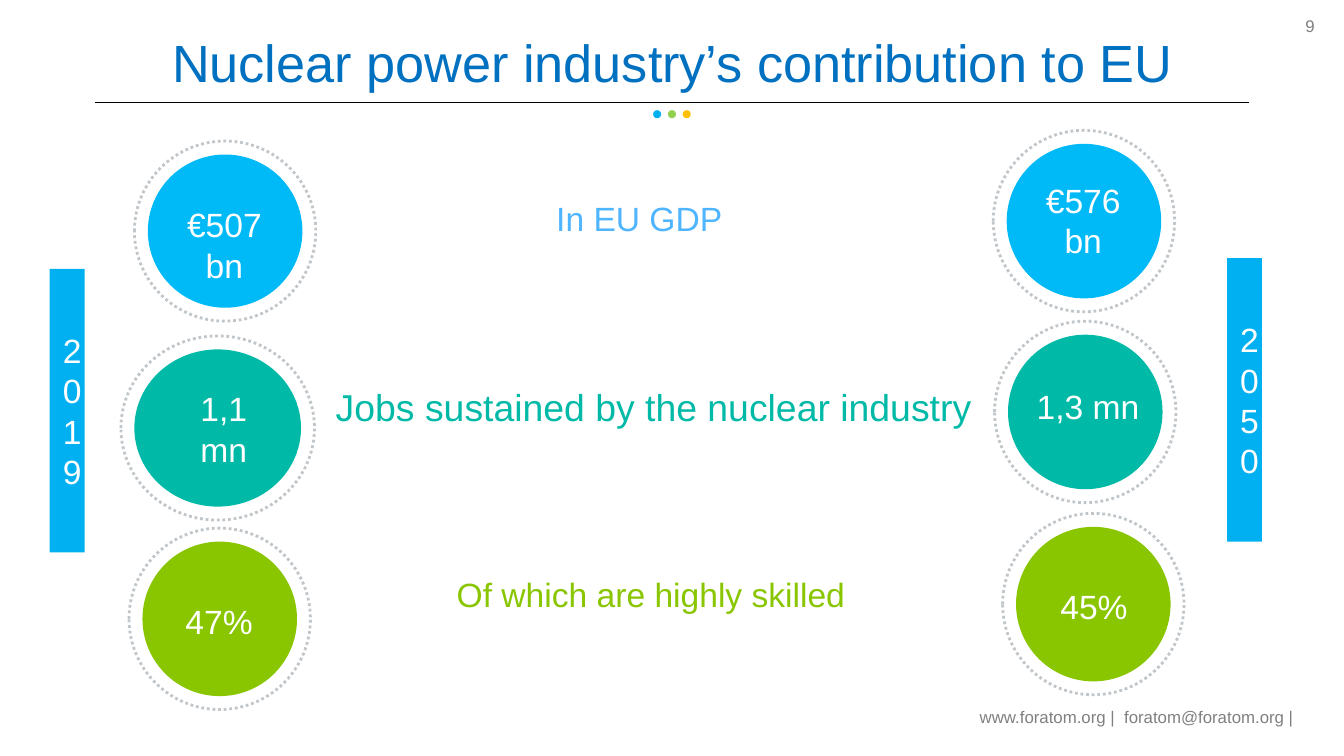
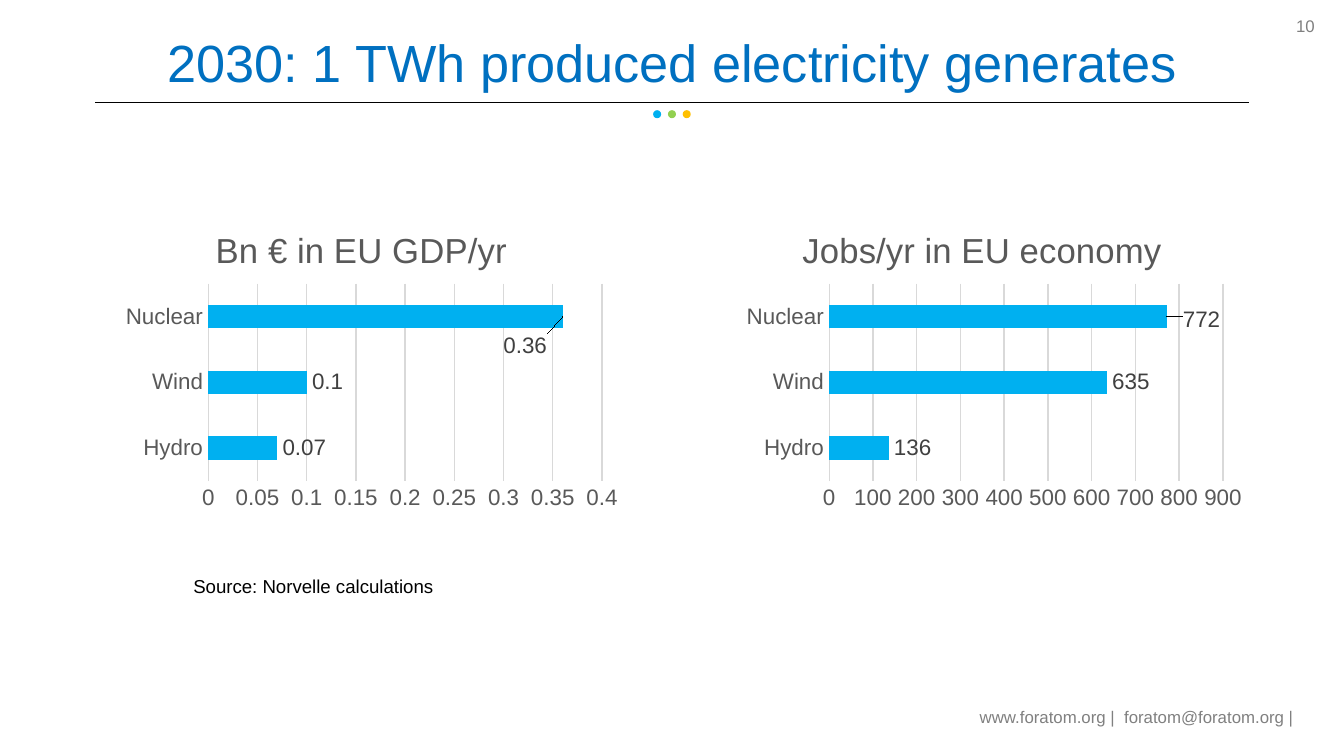
from dataclasses import dataclass

from lxml.etree import SubElement
from pptx import Presentation
from pptx.chart.data import CategoryChartData
from pptx.dml.color import RGBColor
from pptx.enum.chart import XL_CHART_TYPE as ChartType
from pptx.enum.chart import XL_LABEL_POSITION as LabelPosition
from pptx.enum.chart import XL_TICK_MARK as TickMark
from pptx.enum.dml import MSO_LINE as Dash
from pptx.enum.shapes import MSO_CONNECTOR as Connector
from pptx.enum.shapes import MSO_SHAPE as Shape
from pptx.enum.text import MSO_ANCHOR as Anchor
from pptx.enum.text import MSO_AUTO_SIZE as AutoSize
from pptx.enum.text import PP_ALIGN as Align
from pptx.oxml import parse_xml
from pptx.oxml.ns import nsdecls, qn
from pptx.util import Inches, Pt


@dataclass(frozen=True)
class Theme:
    font: str = "Arial"
    title: str = "0070C0"
    accent: str = "00B0F0"
    green: str = "92D050"
    amber: str = "FFC000"
    gdp: str = "00B9F7"
    gdp_text: str = "50B5FF"
    jobs: str = "00BAA7"
    skilled: str = "89C600"
    ring: str = "C1C6CA"
    grid: str = "D9D9D9"
    muted: str = "808080"
    axis: str = "595959"
    value: str = "404040"
    black: str = "000000"
    white: str = "FFFFFF"
    title_size: float = 28
    jobs_size: float = 20
    chart_title_size: float = 18.6
    body_size: float = 18
    axis_size: float = 12
    source_size: float = 10
    small_size: float = 9


THEME = Theme()

FOOTER = "www.foratom.org |  foratom@foratom.org |"
FIRST_PAGE_NUMBER = 9
CONTRIBUTION_TITLE = "Nuclear power industry’s contribution to EU"
GENERATION_TITLE = "2030: 1 TWh produced electricity generates"
SOURCE = "Source: Norvelle calculations"

TOPICS = [
    ("In EU GDP", (4.04, 1.42, 1.45, 0.4), THEME.body_size, THEME.gdp_text),
    ("Jobs sustained by the nuclear industry", (2.4, 2.81, 4.97, 0.44),
     THEME.jobs_size, THEME.jobs),
    ("Of which are highly skilled", (3.3, 4.22, 3.12, 0.4),
     THEME.body_size, THEME.skilled),
]

FIGURES = [
    ("€507\nbn", (1.1, 1.15, 1.15, 1.14), (1, 1.47, 1.34, 0.71), THEME.gdp),
    ("1,1\nmn", (1, 2.6, 1.24, 1.17), (1.18, 2.84, 0.97, 0.71), THEME.jobs),
    ("47%", (1.06, 4.03, 1.15, 1.15), (0.96, 4.42, 1.34, 0.4), THEME.skilled),
    ("€576\nbn", (7.49, 1.07, 1.15, 1.15), (7.39, 1.29, 1.34, 0.71), THEME.gdp),
    ("1,3 mn", (7.5, 2.49, 1.15, 1.15), (7.61, 2.82, 0.97, 0.4), THEME.jobs),
    ("45%", (7.56, 3.92, 1.15, 1.15), (7.47, 4.31, 1.34, 0.4), THEME.skilled),
]
RING_MARGIN = 0.1

YEARS = [("2019", (0.37, 2, 0.26, 2.11)), ("2050", (9.13, 1.92, 0.26, 2.11))]

SOURCES_OF_POWER = ["Hydro", "Wind", "Nuclear"]
CHARTS = [
    {"title": "Bn € in EU GDP/yr", "left": 0.69, "values": [0.07, 0.1, 0.36],
     "top_value": 0.4, "step": 0.05, "label_shift": (-0.12, 0.09)},
    {"title": "Jobs/yr in EU economy", "left": 5.31, "values": [136, 635, 772],
     "top_value": 900, "step": 100, "label_shift": (0.02, 0.01)},
]
CHART_TOP, CHART_WIDTH, CHART_HEIGHT = 1.54, 4, 2.42
PLOT_LEFT, PLOT_TOP, PLOT_WIDTH, PLOT_HEIGHT = 0.86, 0.57, 2.93, 1.47
LEADER_LINES_URI = "{CE6537A1-D6FC-4f65-9D91-7224C49458BB}"
CHART_2012 = "http://schemas.microsoft.com/office/drawing/2012/chart"


def rgb(color):
    return RGBColor.from_string(color)


def inches(bounds):
    return [Inches(length) for length in bounds]


def style_font(font, size, color):
    font.name = THEME.font
    font.size = Pt(size)
    font.bold = False
    font.color.rgb = rgb(color)


def write(frame, text, size, color, align=Align.LEFT, spacing=None):
    frame.text = text
    for para in frame.paragraphs:
        para.alignment = align
        if spacing:
            para.line_spacing = spacing
        style_font(para.font, size, color)


def add_text(page, text, bounds, size, color, align=Align.LEFT, wrap=True, spacing=None):
    box = page.shapes.add_textbox(*inches(bounds))
    frame = box.text_frame
    frame.word_wrap = wrap
    if not wrap:
        frame.auto_size = AutoSize.SHAPE_TO_FIT_TEXT
    write(frame, text, size, color, align, spacing)
    return frame


def add_filled(page, kind, bounds, color):
    shape = page.shapes.add_shape(kind, *inches(bounds))
    shape.shadow.inherit = False
    shape.fill.solid()
    shape.fill.fore_color.rgb = rgb(color)
    shape.line.fill.background()
    return shape


def add_page(deck, title, number):
    page = deck.slides.add_slide(deck.slide_layouts[5])

    footer = add_text(page, FOOTER, (7.23, 5.17, 2.47, 0.29), THEME.small_size,
                      THEME.muted, wrap=False, spacing=1.2)
    footer.vertical_anchor = Anchor.MIDDLE
    footer.margin_left = footer.margin_right = Inches(0.06)
    footer.margin_top = footer.margin_bottom = Inches(0.06)

    rule = page.shapes.add_connector(Connector.STRAIGHT, *inches((0.71, 0.76, 9.29, 0.76)))
    rule.line.color.rgb = rgb(THEME.black)
    rule.line.width = Pt(0.5)
    SubElement(rule._element.spPr, qn("a:effectLst"))

    add_text(page, str(number), (9.5, 0.07, 0.38, 0.3), THEME.small_size,
             THEME.muted, Align.RIGHT)
    for index, color in enumerate((THEME.accent, THEME.green, THEME.amber)):
        add_filled(page, Shape.OVAL, (4.86 + 0.11 * index, 0.82, 0.06, 0.06), color)

    heading = page.shapes.title
    heading.left, heading.top, heading.width, heading.height = inches((0.69, 0.22, 8.62, 0.54))
    frame = heading.text_frame
    frame.auto_size = AutoSize.NONE
    frame.word_wrap = True
    frame.vertical_anchor = Anchor.MIDDLE
    write(frame, title, THEME.title_size, THEME.title, Align.CENTER, 0.9)
    return page


def add_figure(page, text, disc, label, color):
    left, top, width, height = disc
    add_filled(page, Shape.OVAL, disc, color)
    ring = page.shapes.add_shape(Shape.OVAL, *inches((
        left - RING_MARGIN, top - RING_MARGIN,
        width + 2 * RING_MARGIN, height + 2 * RING_MARGIN)))
    ring.shadow.inherit = False
    ring.fill.background()
    ring.line.color.rgb = rgb(THEME.ring)
    ring.line.width = Pt(1.5)
    ring.line.dash_style = Dash.ROUND_DOT
    add_text(page, text, label, THEME.body_size, THEME.white, Align.CENTER)


def add_year(page, year, bounds):
    band = add_filled(page, Shape.RECTANGLE, bounds, THEME.accent)
    frame = band.text_frame
    frame.word_wrap = True
    frame.vertical_anchor = Anchor.MIDDLE
    write(frame, year, THEME.body_size, THEME.white, Align.CENTER)


def manual_layout(values):
    parts = [f'<c:{name} val="{value}"/>' for name, value in values.items()]
    return parse_xml(f'<c:layout {nsdecls("c")}><c:manualLayout>'
                     f'{"".join(parts)}</c:manualLayout></c:layout>')


def place_plot(chart):
    plot_area = chart._chartSpace.chart.plotArea
    for old in plot_area.findall(qn("c:layout")):
        plot_area.remove(old)
    plot_area.insert(0, manual_layout({
        "layoutTarget": "inner", "xMode": "edge", "yMode": "edge",
        "x": PLOT_LEFT / CHART_WIDTH, "y": PLOT_TOP / CHART_HEIGHT,
        "w": PLOT_WIDTH / CHART_WIDTH, "h": PLOT_HEIGHT / CHART_HEIGHT}))


def label_values(series, shift):
    labels = series.data_labels
    labels.show_value = True
    labels.position = LabelPosition.OUTSIDE_END
    style_font(labels.font, THEME.axis_size, THEME.value)

    nuclear = series.points[len(SOURCES_OF_POWER) - 1].data_label
    nuclear.position = LabelPosition.OUTSIDE_END
    style_font(nuclear.font, THEME.axis_size, THEME.value)
    index = series._element.find(".//" + qn("c:dLbl")).find(qn("c:idx"))
    index.addnext(manual_layout(dict(zip("xy", shift))))

    group = series._element.find(qn("c:dLbls"))
    for old in group.findall(qn("c:showLeaderLines")):
        group.remove(old)
    group.append(parse_xml(
        f'<c:extLst {nsdecls("c")}><c:ext uri="{LEADER_LINES_URI}" xmlns:c15="{CHART_2012}">'
        '<c15:showLeaderLines val="0"/></c:ext></c:extLst>'))


def add_bar_chart(page, content):
    data = CategoryChartData()
    data.categories = SOURCES_OF_POWER
    data.add_series(content["title"], content["values"])
    bounds = inches((content["left"], CHART_TOP, CHART_WIDTH, CHART_HEIGHT))
    chart = page.shapes.add_chart(ChartType.BAR_CLUSTERED, *bounds, data).chart
    style_font(chart.font, THEME.source_size, THEME.black)
    chart.has_legend = False
    chart.has_title = True
    chart.chart_title.include_in_layout = False
    write(chart.chart_title.text_frame, content["title"], THEME.chart_title_size,
          THEME.axis, Align.CENTER)
    place_plot(chart)

    for axis in (chart.category_axis, chart.value_axis):
        axis.major_tick_mark = axis.minor_tick_mark = TickMark.NONE
        style_font(axis.tick_labels.font, THEME.axis_size, THEME.axis)
    value_axis = chart.value_axis
    value_axis.minimum_scale = 0
    value_axis.maximum_scale = content["top_value"]
    value_axis.major_unit = content["step"]
    value_axis.format.line.fill.background()
    value_axis.has_major_gridlines = True
    for line in (chart.category_axis.format.line, value_axis.major_gridlines.format.line):
        line.color.rgb = rgb(THEME.grid)
        line.width = Pt(0.75)

    plot = chart.plots[0]
    plot.gap_width = 182
    plot.vary_by_categories = False
    series = plot.series[0]
    series.format.fill.solid()
    series.format.fill.fore_color.rgb = rgb(THEME.accent)
    label_values(series, content["label_shift"])


def main():
    deck = Presentation()
    deck.slide_width = Inches(10)
    deck.slide_height = deck.slide_width * 9 // 16

    contribution = add_page(deck, CONTRIBUTION_TITLE, FIRST_PAGE_NUMBER)
    for text, bounds, size, color in TOPICS:
        add_text(contribution, text, bounds, size, color, wrap=False)
    for figure in FIGURES:
        add_figure(contribution, *figure)
    for year, bounds in YEARS:
        add_year(contribution, year, bounds)

    generation = add_page(deck, GENERATION_TITLE, FIRST_PAGE_NUMBER + 1)
    for content in CHARTS:
        add_bar_chart(generation, content)
    add_text(generation, SOURCE, (1.34, 4.23, 2.7, 0.3), THEME.source_size, THEME.black)

    deck.save("out.pptx")


if __name__ == "__main__":
    main()
